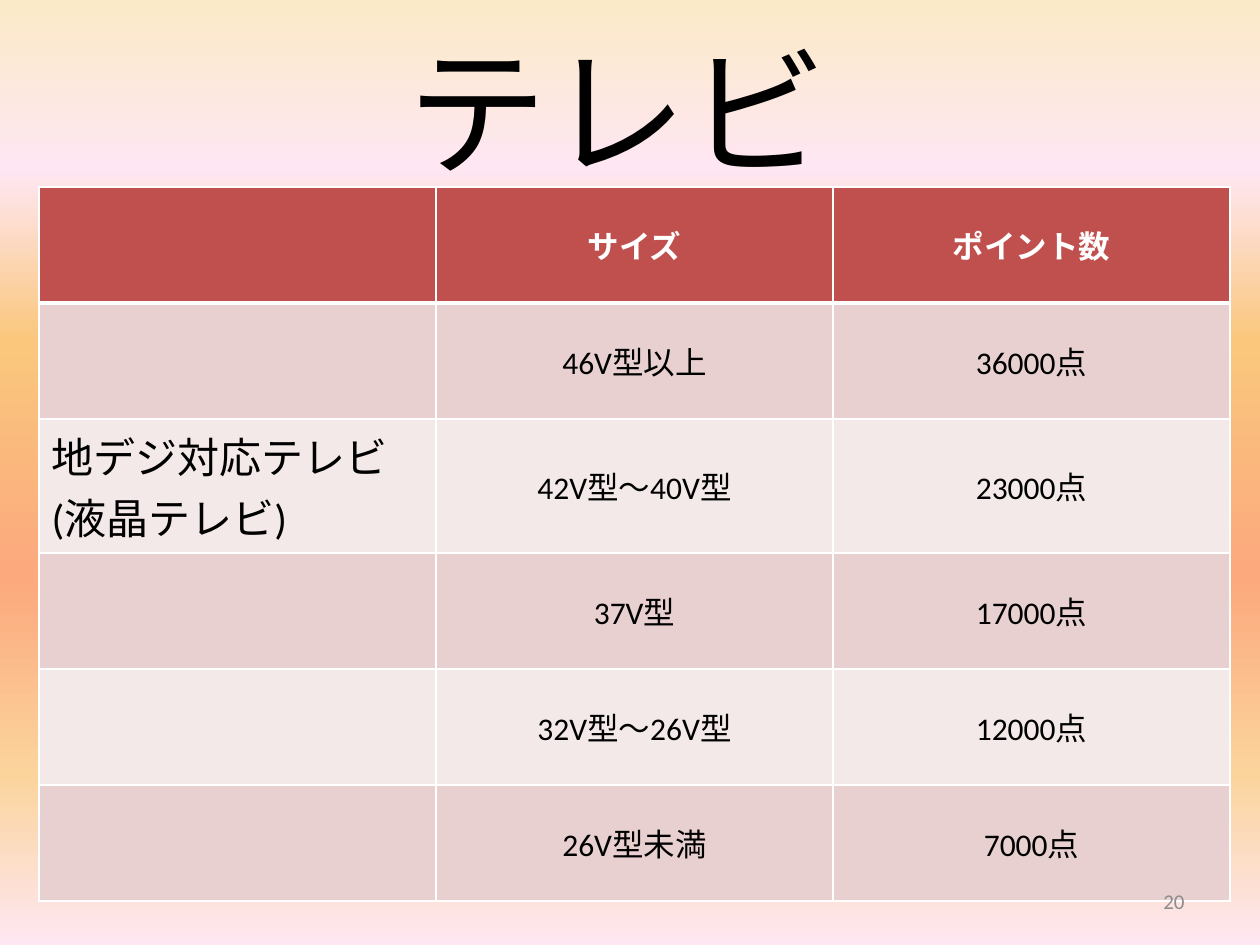
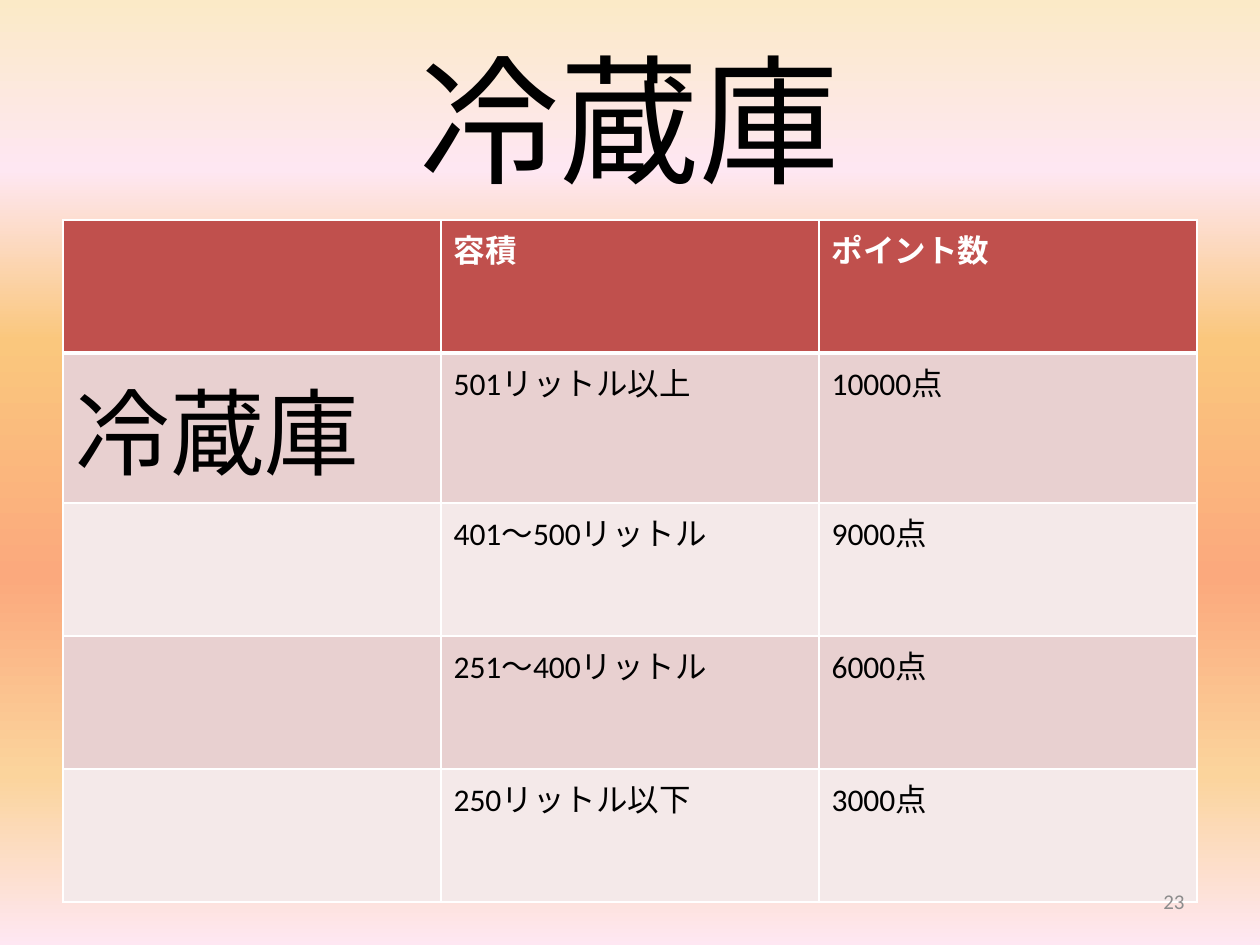
from lxml import etree
from pptx import Presentation
from pptx.dml.color import RGBColor
from pptx.enum import lang
from pptx.enum import text as t
from pptx.oxml import ns
from pptx import util as u

PX = 914400 / 126
FONT = "Calibri"
BLACK = RGBColor(0x00, 0x00, 0x00)
WHITE = RGBColor(0xFF, 0xFF, 0xFF)
GREY = RGBColor(0x8C, 0x8C, 0x8C)
RED = RGBColor(0xC0, 0x50, 0x4D)
ROSE = RGBColor(0xE8, 0xD0, 0xD0)
PALE_ROSE = RGBColor(0xF4, 0xE9, 0xE9)
CREAM = RGBColor(0xFB, 0xEA, 0xC7)
PINK = RGBColor(0xFE, 0xE7, 0xF2)
AMBER = RGBColor(0xFA, 0xC7, 0x7D)
SALMON = RGBColor(0xFB, 0xA9, 0x7D)
SAND = RGBColor(0xFB, 0xD4, 0x9C)
SUNSET = [(0, CREAM), (18, PINK), (36, AMBER), (61, SALMON), (82, SAND), (100, PINK)]
LEFT, CENTER, RIGHT = t.PP_ALIGN.LEFT, t.PP_ALIGN.CENTER, t.PP_ALIGN.RIGHT
TOP, MIDDLE = t.MSO_ANCHOR.TOP, t.MSO_ANCHOR.MIDDLE
PAGE_BOX = (903, 876, 294, 50)


def px(*lengths):
    return [round(length * PX) for length in lengths]


def add(parent, tag, **attributes):
    return etree.SubElement(parent, ns.qn(tag), {k: str(v) for k, v in attributes.items()})


def write(frame, content, size=18, color=BLACK, bold=False, align=LEFT):
    for i, line in enumerate(content.split("\n")):
        paragraph = frame.add_paragraph() if i else frame.paragraphs[0]
        paragraph.alignment = align
        run = paragraph.add_run()
        run.text = line
        run.font.name = FONT
        run.font.size = u.Pt(size)
        run.font.bold = bold
        run.font.color.rgb = color
        run.font.language_id = lang.MSO_LANGUAGE_ID.JAPANESE


def add_text(slide, box, content, **format):
    frame = slide.shapes.add_textbox(*px(*box)).text_frame
    frame.word_wrap = True
    frame.vertical_anchor = MIDDLE
    write(frame, content, **format)


def paint_background(slide):
    slide.background.fill.gradient()
    gradient = slide.background._cSld.find(".//" + ns.qn("a:gradFill"))
    for child in list(gradient):
        gradient.remove(child)
    stops = add(gradient, "a:gsLst")
    for percent, color in SUNSET:
        add(add(stops, "a:gs", pos=percent * 1000), "a:srgbClr", val=color)
    add(gradient, "a:lin", ang=90 * 60000, scaled=0)


def style_cell(cell, row):
    cell.fill.solid()
    cell.fill.fore_color.rgb = RED if row == 0 else (ROSE if row % 2 else PALE_ROSE)
    properties = cell._tc.get_or_add_tcPr()
    points = {"L": 1, "R": 1, "T": 3 if row == 1 else 1, "B": 3 if row == 0 else 1}
    for i, (side, width) in enumerate(points.items()):
        border = add(properties, "a:ln" + side, w=u.Pt(width))
        add(add(border, "a:solidFill"), "a:srgbClr", val=WHITE)
        properties.insert(i, border)


def add_points_table(slide, box, rows, heights, label_size, align, anchor):
    columns = len(rows[0])
    left, top, width = box
    table = slide.shapes.add_table(len(rows), columns,
                                   *px(left, top, width, sum(heights))).table
    for column in table.columns:
        column.width = px(width / columns)[0]
    for r, (values, height) in enumerate(zip(rows, heights)):
        table.rows[r].height = px(height)[0]
        for c, value in enumerate(values):
            cell = table.cell(r, c)
            style_cell(cell, r)
            if not value:
                continue
            if c == 0:
                write(cell.text_frame, value, size=label_size)
            else:
                cell.vertical_anchor = anchor
                write(cell.text_frame, value, color=BLACK if r else WHITE,
                      bold=r == 0, align=align)


def add_points_slide(deck, title, title_box, page, table_box, rows, heights, **table_format):
    slide = deck.slides.add_slide(deck.slide_layouts[6])
    paint_background(slide)
    add_text(slide, title_box, title, size=80, align=CENTER)
    add_points_table(slide, table_box, rows, heights, **table_format)
    add_text(slide, PAGE_BOX, page, size=12, color=GREY, align=RIGHT)


def main():
    deck = Presentation()
    deck.slide_width, deck.slide_height = px(1260, 945)
    television_rows = [
        ("", "サイズ", "ポイント数"),
        ("", "46V型以上", "36000点"),
        ("地デジ対応テレビ\n(液晶テレビ)", "42V型～40V型", "23000点"),
        ("", "37V型", "17000点"),
        ("", "32V型～26V型", "12000点"),
        ("", "26V型未満", "7000点"),
    ]
    refrigerator_rows = [
        ("", "容積", "ポイント数"),
        ("冷蔵庫", "501リットル以上", "10000点"),
        ("", "401～500リットル", "9000点"),
        ("", "251～400リットル", "6000点"),
        ("", "250リットル以下", "3000点"),
    ]
    add_points_slide(deck, "テレビ", (39, 29, 1158, 158), "20", (39, 187, 1191),
                     television_rows, [116, 116, 134, 116, 116, 116],
                     label_size=24, align=CENTER, anchor=MIDDLE)
    add_points_slide(deck, "冷蔵庫", (63, 38, 1134, 158), "23", (63, 220, 1134),
                     refrigerator_rows, [133, 150, 133, 133, 133],
                     label_size=54, align=LEFT, anchor=TOP)
    deck.save("out.pptx")


if __name__ == "__main__":
    main()
